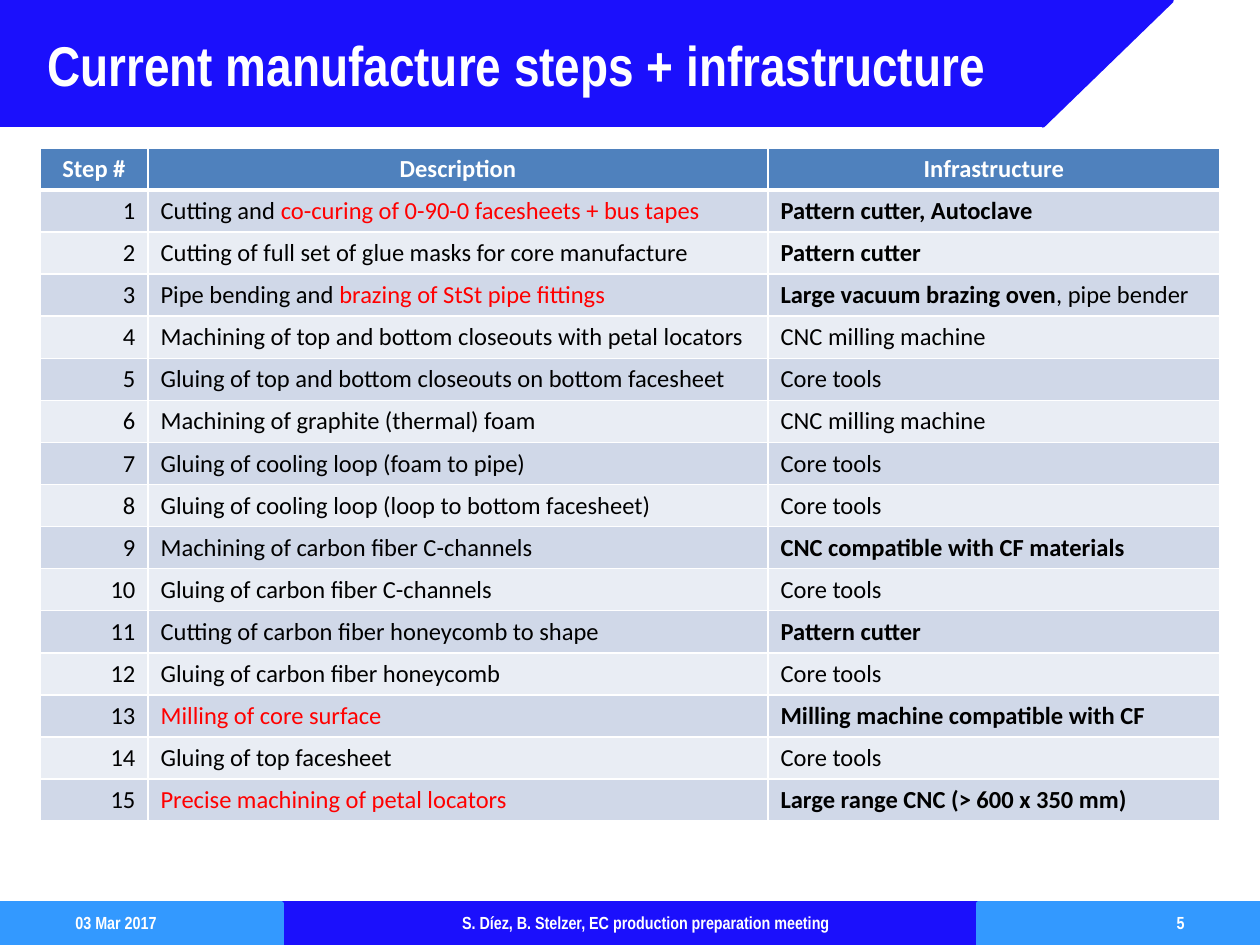
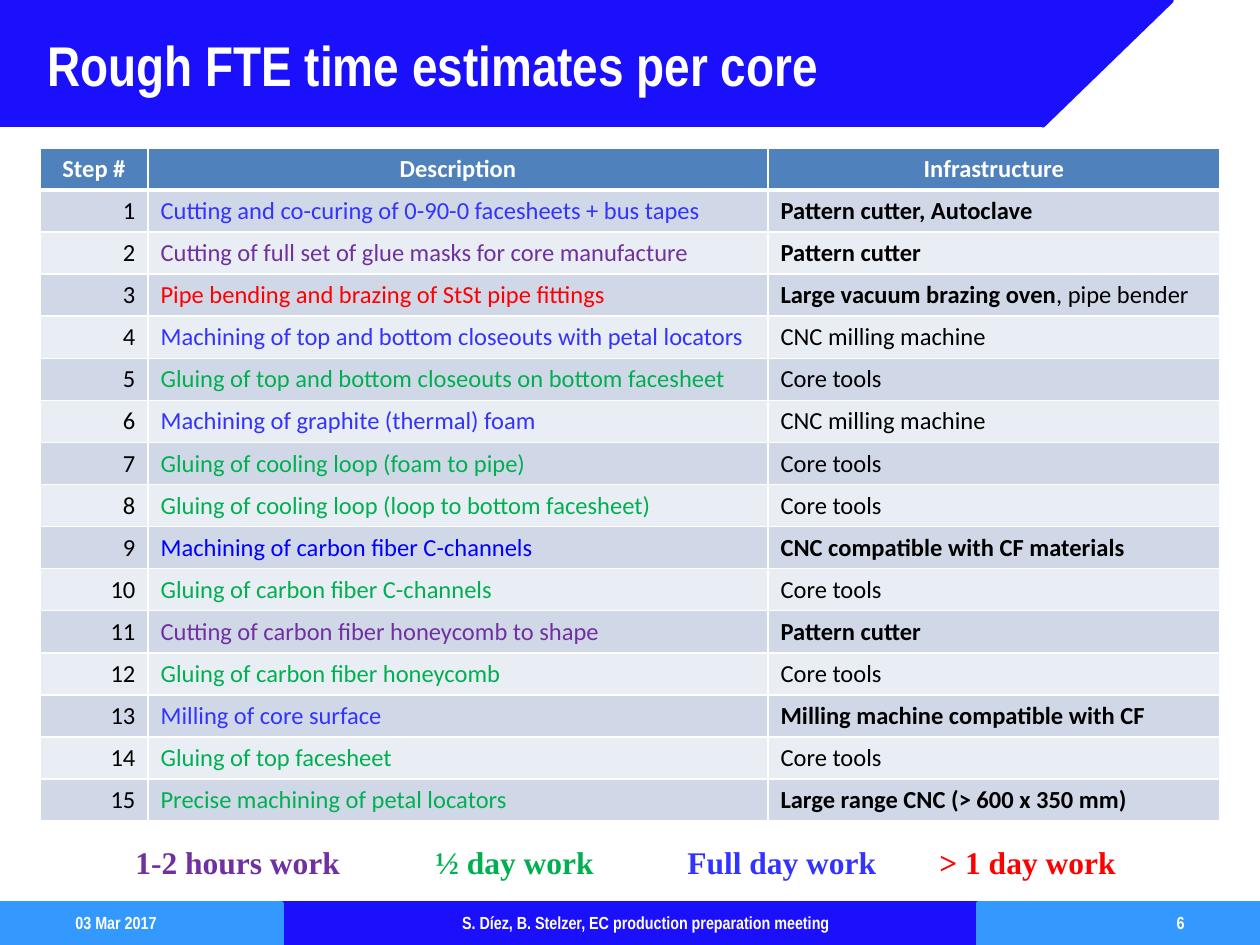
"""Build two slides on core manufacture: infrastructure per step and time estimates."""
from lxml import etree
from pptx import Presentation
from pptx import util as u
from pptx.dml.color import RGBColor
from pptx.enum import shapes, text
from pptx.oxml import ns

PX = 914400 / 126
BLUE, SKY, WHITE, BLACK, RED = "1B10FC", "3399FF", "FFFFFF", "000000", "FF0000"
HEADER, ODD, EVEN = "4F81BD", "D0D8E8", "E9EDF4"
HOURS, HALF_DAY, FULL_DAY, FULL_DAY_CF, LONGER = "7030A0", "00B050", "3333FF", "0000FF", RED
LEFT, CENTER, RIGHT = text.PP_ALIGN.LEFT, text.PP_ALIGN.CENTER, text.PP_ALIGN.RIGHT
rgb = RGBColor.from_string


def px(*lengths):
    return [u.Emu(round(length * PX)) for length in lengths]


def add_run(paragraph, words, font, size, color, bold):
    run = paragraph.add_run()
    run.text = words
    run.font.name, run.font.size, run.font.bold = font, u.Pt(size), bold
    run.font.color.rgb = rgb(color)


bands = [
    ("RECTANGLE", (0, 903, 1260, 42), 0, BLUE),
    ("RECTANGLE", (0, 0, 1043, 125), 0, BLUE),
    ("RIGHT_TRIANGLE", (1045, -1, 125, 129), 90, BLUE),
    ("RECTANGLE", (0, 903, 282, 42), 0, SKY),
    ("RECTANGLE", (978, 903, 282, 42), 0, SKY),
]
headings = ["Step #", "Description", "Infrastructure"]
column_widths = [108, 620, 452]
steps = [
    ("Cutting and ", "co-curing of 0-90-0 facesheets + bus tapes", FULL_DAY, "Pattern cutter, Autoclave", ""),
    ("Cutting of full set of glue masks for core manufacture", "", HOURS, "Pattern cutter", ""),
    ("Pipe bending and ", "brazing of StSt pipe fittings", LONGER, "Large vacuum brazing oven", ", pipe bender"),
    ("Machining of top and bottom closeouts with petal locators", "", FULL_DAY, "", "CNC milling machine"),
    ("Gluing of top and bottom closeouts on bottom facesheet", "", HALF_DAY, "", "Core tools"),
    ("Machining of graphite (thermal) foam", "", FULL_DAY, "", "CNC milling machine"),
    ("Gluing of cooling loop (foam to pipe)", "", HALF_DAY, "", "Core tools"),
    ("Gluing of cooling loop (loop to bottom facesheet)", "", HALF_DAY, "", "Core tools"),
    ("Machining of carbon fiber C-channels", "", FULL_DAY_CF, "CNC compatible with CF materials", ""),
    ("Gluing of carbon fiber C-channels", "", HALF_DAY, "", "Core tools"),
    ("Cutting of carbon fiber honeycomb to shape", "", HOURS, "Pattern cutter", ""),
    ("Gluing of carbon fiber honeycomb", "", HALF_DAY, "", "Core tools"),
    ("", "Milling of core surface", FULL_DAY, "Milling machine compatible with CF", ""),
    ("Gluing of top facesheet", "", HALF_DAY, "", "Core tools"),
    ("", "Precise machining of petal locators", HALF_DAY, "Large range CNC (> 600 x 350 mm)", ""),
]
legend = [
    ("1-2 hours work", HOURS),
    ("\t½ day work\t", HALF_DAY),
    ("Full day work\t", FULL_DAY),
    ("> 1 day work", LONGER),
]
pages = [
    (5, "Current manufacture steps + infrastructure", False),
    (6, "Rough FTE time estimates per core", True),
]

deck = Presentation()
deck.slide_width, deck.slide_height = px(1260, 945)
title_only, title_and_body = deck.slide_layouts[5], deck.slide_layouts[1]

for number, heading, timed in pages:
    slide = deck.slides.add_slide(title_and_body if timed else title_only)

    if number == pages[0][0]:
        for position, (outline, box, turn, color) in enumerate(bands):
            band = slide.shapes.add_shape(shapes.MSO_SHAPE[outline], *px(*box))
            band.rotation = turn
            band.shadow.inherit = False
            band.fill.solid()
            band.fill.fore_color.rgb = band.line.color.rgb = rgb(color)
            band.line.width = u.Pt(2)
            band._element.nvSpPr.cNvPr.set("id", str(20 + position))
            deck.slide_master.shapes._spTree.append(band._element)

    title = slide.shapes.title
    title.left, title.top, title.width, title.height = px(35, 0, 1134, 128)
    title.text_frame.auto_size = text.MSO_AUTO_SIZE.NONE
    title.text_frame.vertical_anchor = text.MSO_ANCHOR.MIDDLE
    title_line = title.text_frame.paragraphs[0]
    title_line.alignment = text.PP_ALIGN.JUSTIFY
    add_run(title_line, heading, "Arial Narrow", 32, WHITE, True)

    for words, left, width, alignment in [
        ("03 Mar 2017", 63, 173, LEFT),
        ("S. Díez, B. Stelzer, EC production preparation meeting", 422, 447, CENTER),
        (str(number), 1131, 66, RIGHT),
    ]:
        footer = slide.shapes.add_textbox(*px(left, 908, width, 31)).text_frame
        footer.word_wrap = True
        footer.vertical_anchor = text.MSO_ANCHOR.BOTTOM
        footer.paragraphs[0].alignment = alignment
        add_run(footer.paragraphs[0], words, "Arial Narrow", 10, WHITE, True)

    if timed:
        key = slide.placeholders[1]
        key.left, key.top, key.width, key.height = px(30, 837, 1191, 69)
        key.text_frame.auto_size = text.MSO_AUTO_SIZE.NONE
        key_line = key.text_frame.paragraphs[0]
        key_line.alignment = CENTER
        key_line.space_before = u.Pt(0)
        properties = key_line._p.get_or_add_pPr()
        indent = px(48)[0]
        for name, value in [("marL", indent), ("indent", -indent), ("defTabSz", u.Inches(1))]:
            properties.set(name, str(int(value)))
        etree.SubElement(properties, ns.qn("a:buNone"))
        for words, color in legend:
            add_run(key_line, words, "Times New Roman", 18, color, True)

    rows = [[[(name, WHITE, True)] for name in headings]]
    for step, (routine, critical, effort, special, common) in enumerate(steps, 1):
        if timed:
            description = [(routine + critical, effort, False)]
        else:
            description = [(routine, BLACK, False), (critical, RED, False)]
        rows.append([[(str(step), BLACK, False)], description, [(special, BLACK, True), (common, BLACK, False)]])

    table = slide.shapes.add_table(len(rows), 3, *px(40, 148, sum(column_widths), 42 * len(rows))).table
    for column, width in zip(table.columns, px(*column_widths)):
        column.width = width
    for r, row in enumerate(rows):
        for c, runs in enumerate(row):
            cell = table.cell(r, c)
            cell.vertical_anchor = text.MSO_ANCHOR.MIDDLE
            thick_side = {0: "B", 1: "T"}.get(r)
            for side in "LRTB":
                width = u.Pt(3 if side == thick_side else 1)
                border = etree.SubElement(cell._tc.get_or_add_tcPr(), ns.qn(f"a:ln{side}"), w=str(int(width)))
                border_fill = etree.SubElement(border, ns.qn("a:solidFill"))
                etree.SubElement(border_fill, ns.qn("a:srgbClr"), val=WHITE)
            cell.fill.solid()
            cell.fill.fore_color.rgb = rgb(HEADER if r == 0 else ODD if r % 2 else EVEN)
            entry = cell.text_frame.paragraphs[0]
            entry.alignment = CENTER if r == 0 else RIGHT if c == 0 else LEFT
            for words, color, bold in runs:
                if words:
                    add_run(entry, words, "Calibri", 14, color, bold)

deck.save("out.pptx")
